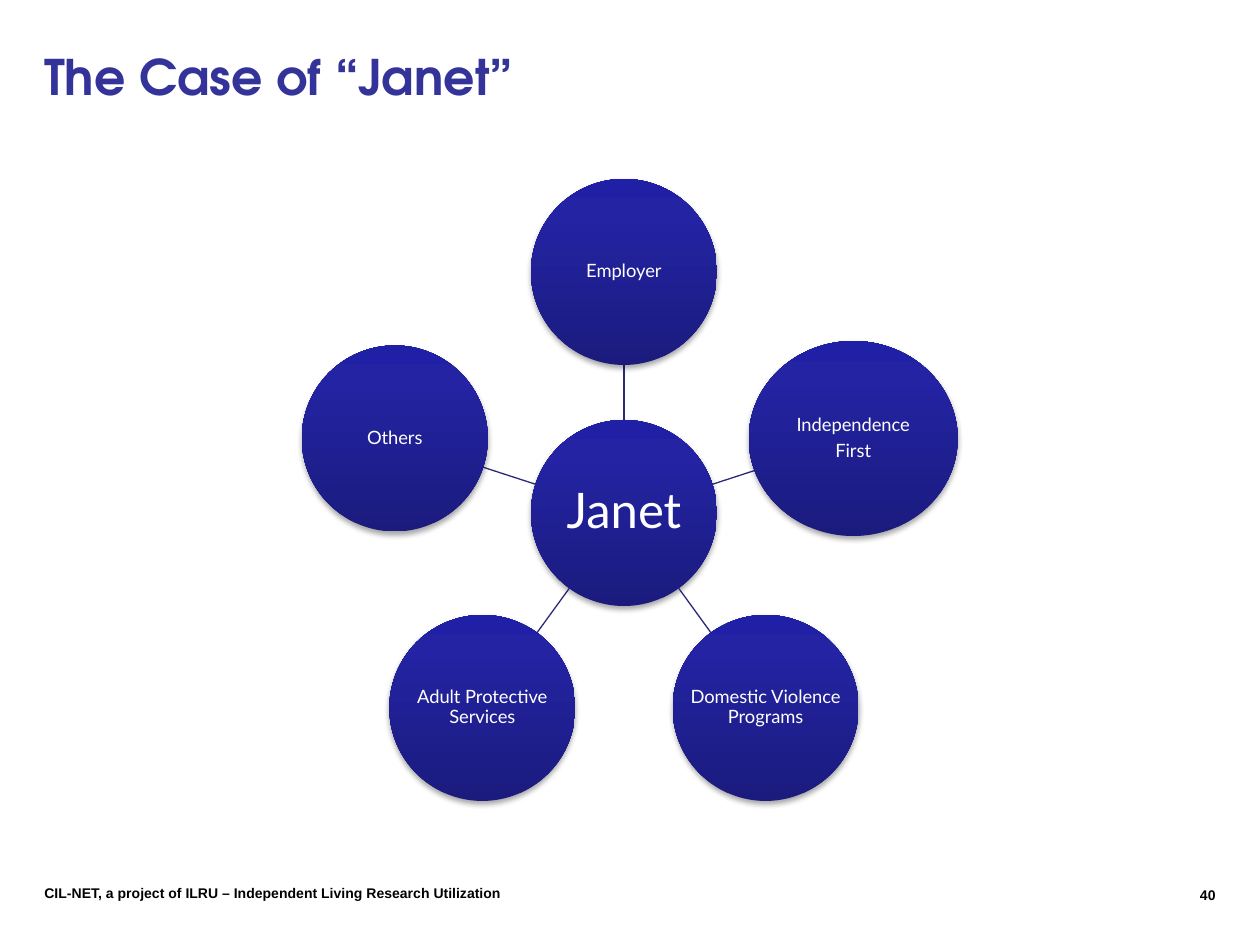
from math import cos, sin, radians
from lxml import etree
from pptx import Presentation
from pptx.dml.color import RGBColor
from pptx.enum.shapes import MSO_CONNECTOR as CONN, MSO_SHAPE as SHAPE
from pptx.enum.text import MSO_ANCHOR as ANCHOR, PP_ALIGN as ALIGN
from pptx.oxml import parse_xml
from pptx.oxml.ns import nsdecls, qn
from pptx.util import Pt

PX = 914400 / 126
GRADIENT = f"""<a:gradFill {nsdecls('a')} rotWithShape="1"><a:gsLst>
<a:gs pos="0"><a:srgbClr val="1B1B7E"/></a:gs>
<a:gs pos="80000"><a:srgbClr val="2323A3"/></a:gs>
<a:gs pos="100000"><a:srgbClr val="2020A6"/></a:gs>
</a:gsLst><a:lin ang="16200000" scaled="0"/></a:gradFill>"""
SHADOW = f"""<a:effectLst {nsdecls('a')}>
<a:outerShdw blurRad="40000" dist="23000" dir="5400000" rotWithShape="0">
<a:srgbClr val="000000"><a:alpha val="35000"/></a:srgbClr>
</a:outerShdw></a:effectLst>"""

prs = Presentation()
prs.slide_width, prs.slide_height = round(1260 * PX), round(945 * PX)
s = prs.slides.add_slide(prs.slide_layouts[6])


def add_text(box, lines, size, font, color, bold=False, align=ALIGN.LEFT,
             anchor=ANCHOR.TOP, inset=None, spacing=None):
    tf = s.shapes.add_textbox(*[round(v * PX) for v in box]).text_frame
    tf.word_wrap, tf.vertical_anchor = True, anchor
    if inset is not None:
        tf.margin_left = tf.margin_right = round(inset * PX)
        tf.margin_top = tf.margin_bottom = round(inset * PX)
    tf.text = lines
    for p in tf.paragraphs:
        p.alignment = align
        if spacing:
            p.line_spacing, p.space_after = spacing, Pt(size * 0.35)
        p.font.size, p.font.name, p.font.bold = Pt(size), font, bold
        p.font.color.rgb = RGBColor.from_string(color)


def add_circle(cx, cy, w, h, label, size, inset):
    box = cx - w / 2, cy - h / 2, w, h
    sp = s.shapes.add_shape(SHAPE.OVAL, *[round(v * PX) for v in box])
    sp.line.fill.background()
    sp._element.spPr.find(qn("a:prstGeom")).addnext(parse_xml(GRADIENT))
    sp._element.spPr.append(parse_xml(SHADOW))
    add_text(box, label, size, "Lato", "FFFFFF", align=ALIGN.CENTER,
             anchor=ANCHOR.MIDDLE, inset=inset, spacing=0.9)


# Title
add_text((32, 21, 1166, 110), "The Case of “Janet”", 28, "TeX Gyre Adventor",
         "333399", bold=True, anchor=ANCHOR.MIDDLE)

# Hub
CX, CY, ORBIT, D = 624, 513, 241, 186
add_circle(CX, CY, D, D, "Janet", 28, 3)

# Satellites, clockwise from the top: label, width, height, spoke end
satellites = [
    ("Employer", D, D, 148),
    ("Independence\nFirst", 209, 195, 138),
    ("Domestic Violence Programs", D, D, 148),
    ("Adult Protective Services", D, D, 148),
    ("Others", D, D, 148),
]
for i, (label, w, h, end) in enumerate(satellites):
    angle = radians(-90 + 360 / len(satellites) * i)
    dx, dy = cos(angle), sin(angle)
    ends = [CX + D / 2 * dx, CY + D / 2 * dy, CX + end * dx, CY + end * dy]
    spoke = s.shapes.add_connector(CONN.STRAIGHT, *[round(v * PX) for v in ends])
    spoke.line.color.rgb = RGBColor.from_string("29297B")
    spoke.line.width = Pt(0.75)
    etree.SubElement(spoke._element.spPr, qn("a:effectLst"))
    add_circle(CX + ORBIT * dx, CY + ORBIT * dy, w, h, label, 10.5, 1)

# Footer and page number
add_text((32, 878, 630, 29),
         "CIL-NET, a project of ILRU – Independent Living Research Utilization",
         8, "Arial", "000000", bold=True)
add_text((903, 880, 325, 34), "40", 8, "Arial", "000000", bold=True,
         align=ALIGN.RIGHT)

prs.save("out.pptx")
